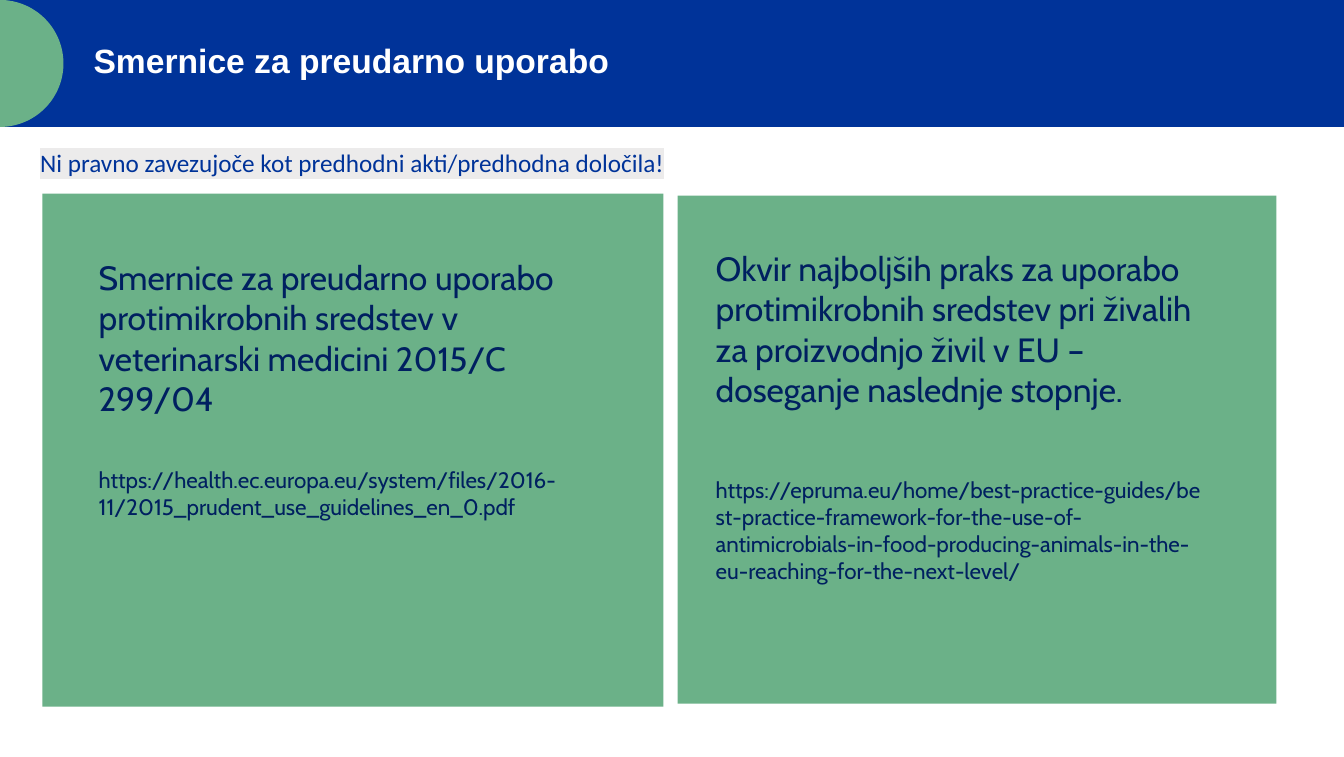
from dataclasses import dataclass
from math import cos, pi, sin

from lxml import etree
from pptx import Presentation
from pptx.dml.color import RGBColor
from pptx.enum.shapes import MSO_SHAPE
from pptx.enum.text import MSO_ANCHOR
from pptx.oxml.ns import qn
from pptx.shapes.autoshape import Shape
from pptx.slide import Slide
from pptx.text.text import _Paragraph
from pptx.util import Inches, Pt

RECTANGLE = MSO_SHAPE.RECTANGLE
TOP = MSO_ANCHOR.TOP
MIDDLE = MSO_ANCHOR.MIDDLE


@dataclass(frozen=True)
class Theme:
    blue: str = "003399"
    green: str = "6BB188"
    navy: str = "002060"
    white: str = "FFFFFF"
    highlight: str = "ECEBEB"
    title_font: str = "Arial"
    note_font: str = "Calibri"
    card_font: str = "Cabin"
    heading_size: int = 24
    note_size: int = 18
    link_size: int = 16


@dataclass(frozen=True)
class Box:
    left: float
    top: float
    width: float
    height: float

    def lengths(self) -> tuple[int, int, int, int]:
        return (Inches(self.left), Inches(self.top),
                Inches(self.width), Inches(self.height))


@dataclass(frozen=True)
class GuidelineCard:
    panel: Box
    text_box: Box
    heading: str
    link: str
    link_gap: int


THEME = Theme()
SLIDE_WIDTH = 13.33
SLIDE_HEIGHT = 7.51
BANNER_HEIGHT = 1.26
ARC_STEPS = 90

CARDS = [
    GuidelineCard(
        Box(0.42, 1.92, 6.16, 5.09),
        Box(0.88, 2.5, 5.42, 3),
        "Smernice za preudarno uporabo protimikrobnih sredstev v "
        "veterinarski medicini 2015/C 299/04",
        "https://health.ec.europa.eu/system/files/2016-11/"
        "2015_prudent_use_guidelines_en_0.pdf",
        34,
    ),
    GuidelineCard(
        Box(6.72, 1.94, 5.94, 5.04),
        Box(7, 2.41, 5.08, 3.2),
        "Okvir najboljših praks za uporabo protimikrobnih sredstev pri "
        "živalih za proizvodnjo živil v EU – doseganje naslednje stopnje.",
        " https://epruma.eu/home/best-practice-guides/"
        "best-practice-framework-for-the-use-of-antimicrobials-in-"
        "food-producing-animals-in-the-eu-reaching-for-the-next-level/",
        29,
    ),
]


def paint(shape: Shape, color: str) -> None:
    shape.shadow.inherit = False
    shape.fill.solid()
    shape.fill.fore_color.rgb = RGBColor.from_string(color)
    shape.line.fill.background()


def add_panel(slide: Slide, box: Box, color: str) -> None:
    paint(slide.shapes.add_shape(RECTANGLE, *box.lengths()), color)


def add_half_disc(slide: Slide, radius: float, color: str) -> None:
    angles = [pi * step / ARC_STEPS - pi / 2 for step in range(ARC_STEPS + 1)]
    points = [(Inches(radius * cos(angle)), Inches(radius + radius * sin(angle)))
              for angle in angles]
    builder = slide.shapes.build_freeform(*points[0])
    builder.add_line_segments(points[1:], close=True)
    paint(builder.convert_to_shape(), color)


def format_runs(paragraph: _Paragraph, font: str, size: int, color: str,
                bold: bool = False) -> None:
    for run in paragraph.runs:
        run.font.name = font
        run.font.size = Pt(size)
        run.font.bold = bold
        run.font.color.rgb = RGBColor.from_string(color)


def highlight_runs(paragraph: _Paragraph, color: str) -> None:
    for run in paragraph.runs:
        highlight = etree.Element(qn("a:highlight"))
        etree.SubElement(highlight, qn("a:srgbClr"), val=color)
        run.font.fill._xPr.find(qn("a:solidFill")).addnext(highlight)


def add_text(slide: Slide, box: Box, text: str, anchor: MSO_ANCHOR = TOP) -> Shape:
    shape = slide.shapes.add_textbox(*box.lengths())
    shape.text_frame.word_wrap = True
    shape.text_frame.vertical_anchor = anchor
    shape.text_frame.text = text
    return shape


def add_card(slide: Slide, card: GuidelineCard) -> None:
    add_panel(slide, card.panel, THEME.green)
    text_frame = add_text(slide, card.text_box, card.heading).text_frame
    format_runs(text_frame.paragraphs[0], THEME.card_font,
                THEME.heading_size, THEME.navy)
    link = text_frame.add_paragraph()
    link.text = card.link
    link.space_before = Pt(card.link_gap)
    format_runs(link, THEME.card_font, THEME.link_size, THEME.navy)


def main() -> None:
    presentation = Presentation()
    presentation.slide_width = Inches(SLIDE_WIDTH)
    presentation.slide_height = Inches(SLIDE_HEIGHT)
    slide = presentation.slides.add_slide(presentation.slide_layouts[6])

    add_panel(slide, Box(0, 0, SLIDE_WIDTH, BANNER_HEIGHT), THEME.blue)
    add_half_disc(slide, BANNER_HEIGHT / 2, THEME.green)
    title = add_text(slide, Box(0.83, 0.34, 10.58, 0.52),
                     "Smernice za preudarno uporabo", MIDDLE)
    format_runs(title.text_frame.paragraphs[0], THEME.title_font,
                THEME.heading_size, THEME.white, bold=True)

    for card in CARDS:
        add_card(slide, card)

    note = add_text(slide, Box(0.3, 1.41, 8.62, 0.4),
                    "Ni pravno zavezujoče kot predhodni akti/predhodna določila!")
    note_paragraph = note.text_frame.paragraphs[0]
    format_runs(note_paragraph, THEME.note_font, THEME.note_size, THEME.blue)
    highlight_runs(note_paragraph, THEME.highlight)

    presentation.save("out.pptx")


if __name__ == "__main__":
    main()
